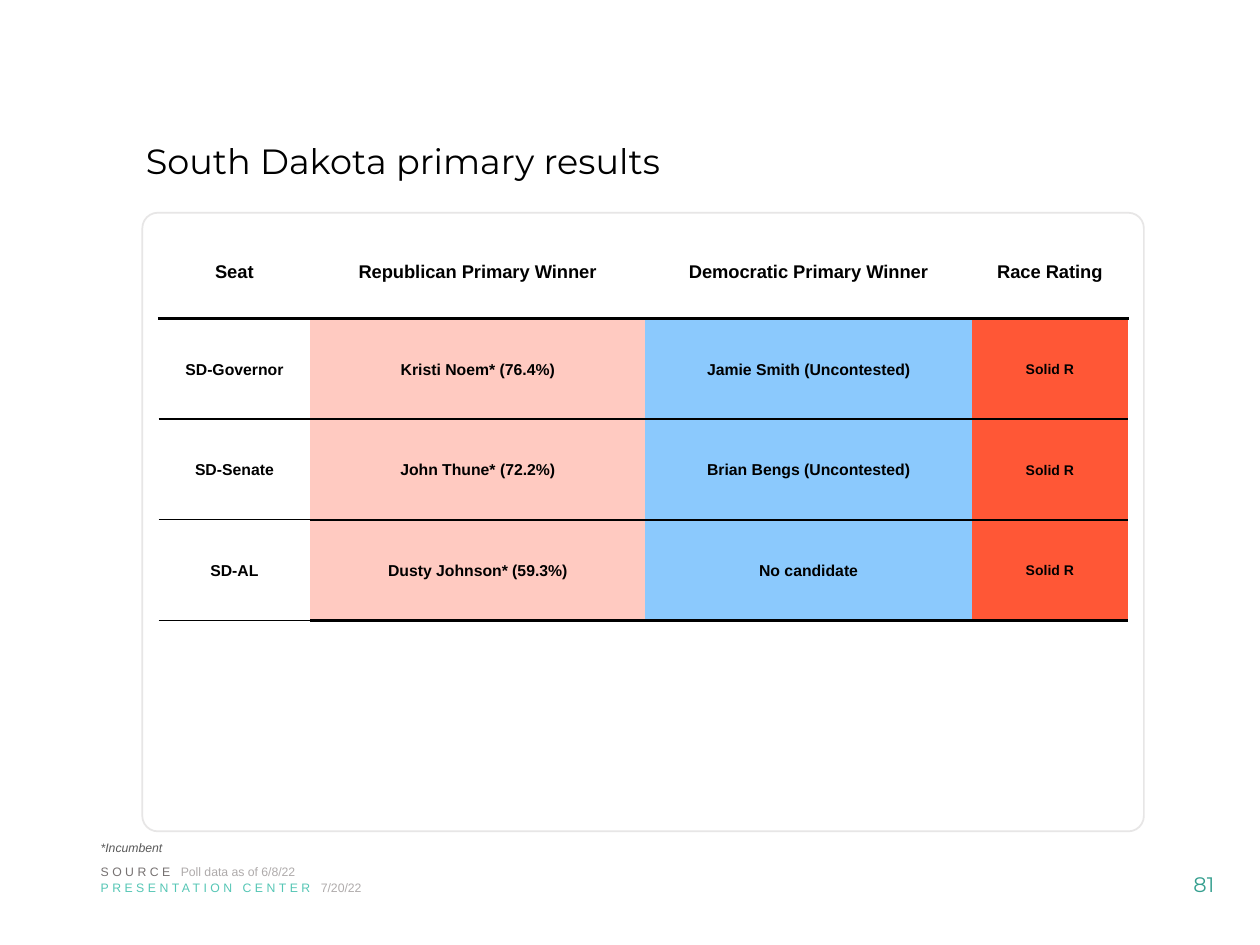
import lxml.etree
import pptx
import pptx.dml.color
import pptx.enum.shapes
import pptx.enum.text
import pptx.oxml.ns
import pptx.util

Cm = pptx.util.Cm
Pt = pptx.util.Pt
qn = pptx.oxml.ns.qn
Align = pptx.enum.text.PP_ALIGN
Anchor = pptx.enum.text.MSO_ANCHOR

HUES = {
    "black": "000000", "white": "FFFFFF", "frame": "E7E6E6",
    "teal": "55C6B5", "page": "359F8F", "pale": "AFABAB",
    "gray": "767171", "note": "595959",
    "rose": "FFCAC1", "blue": "8BC9FD", "red": "FF5736",
}
PLAIN = "{2D5ABB26-0587-4C30-8999-92F81FD0307C}"


def hue(name):
    return pptx.dml.color.RGBColor.from_string(HUES[name])


class Deck:
    def __init__(self, wide, high):
        self.show = pptx.Presentation()
        self.show.slide_width, self.show.slide_height = Cm(wide), Cm(high)
        self.slide = self.show.slides.add_slide(self.show.slide_layouts[6])
        self.face = "Arial"

    def run(self, para, text, size, color, gap=0, **form):
        part = para.add_run()
        part.text = text
        looks = {"name": self.face, "size": Pt(size), **form}
        for key, value in looks.items():
            setattr(part.font, key, value)
        part.font.color.rgb = hue(color)
        if gap:
            part.font._element.set("spc", str(gap * 100))

    def text(self, box, runs, anchor=Anchor.TOP, **form):
        frame = self.slide.shapes.add_textbox(*map(Cm, box)).text_frame
        frame.word_wrap = True
        frame.vertical_anchor = anchor
        para = frame.paragraphs[0]
        for key, value in form.items():
            setattr(para, key, value)
        for text, size, color, looks in runs:
            self.run(para, text, size, color, **looks)

    def card(self, box, bend):
        kind = pptx.enum.shapes.MSO_SHAPE.ROUNDED_RECTANGLE
        card = self.slide.shapes.add_shape(kind, *map(Cm, box))
        card.adjustments[0] = bend
        card.shadow.inherit = False
        card.fill.solid()
        card.fill.fore_color.rgb = hue("white")
        card.line.color.rgb = hue("frame")
        card.line.width = Pt(1)

    def edge(self, cell, sides):
        props = cell._tc.get_or_add_tcPr()
        for spot, side in enumerate("LRTB"):
            line = lxml.etree.Element(qn("a:ln" + side))
            props.insert(spot, line)
            if side not in sides:
                lxml.etree.SubElement(line, qn("a:noFill"))
                continue
            color, width = sides[side]
            line.set("w", str(int(Pt(width))))
            fill = lxml.etree.SubElement(line, qn("a:solidFill"))
            lxml.etree.SubElement(fill, qn("a:srgbClr")).set("val", HUES[color])

    def cell(self, cell, text, size, fill, sides):
        looks = {
            "vertical_anchor": Anchor.MIDDLE, "margin_left": Cm(0.03),
            "margin_right": Cm(0.03), "margin_top": Cm(0.03), "margin_bottom": 0,
        }
        for key, value in looks.items():
            setattr(cell, key, value)
        para = cell.text_frame.paragraphs[0]
        para.alignment = Align.CENTER
        self.run(para, text, size, "black", bold=True)
        if fill:
            cell.fill.solid()
            cell.fill.fore_color.rgb = hue(fill)
        else:
            cell.fill.background()
        self.edge(cell, sides)

    def table(self, left, top, wides, highs, rows):
        box = map(Cm, (left, top, sum(wides), sum(highs)))
        grid = self.slide.shapes.add_table(len(rows), len(wides), *box).table
        grid.first_row = grid.horz_banding = False
        grid._tbl.tblPr.find(qn("a:tableStyleId")).text = PLAIN
        for col, wide in zip(grid.columns, wides):
            col.width = Cm(wide)
        for row, high in zip(grid.rows, highs):
            row.height = Cm(high)
        sizes, fills = (9, 9, 9, 8), (None, "rose", "blue", "red")
        last = len(rows) - 1
        for r, row in enumerate(rows):
            for c, text in enumerate(row):
                if r == 0:
                    sides = dict.fromkeys("LRT", ("white", 1))
                    sides["B"] = ("black", 1.5)
                    self.cell(grid.cell(r, c), text, 10.5, None, sides)
                    continue
                base = 1.5 if r == last else 1
                if c == 0 and r > 1:
                    base = 0.75
                above = 1.5 if r == 1 else 0.75 if c == 0 and r == last else 1
                sides = {"T": ("black", above), "B": ("black", base)}
                self.cell(grid.cell(r, c), text, sizes[c], fills[c], sides)


def main():
    deck = Deck(25.4, 19.05)
    mont = {"name": "Montserrat"}
    deck.text((23.14, 17.32, 2.26, 1.02), [("81", 12, "page", mont)],
              Anchor.MIDDLE, alignment=Align.CENTER)
    deck.text((2.69, 2.29, 20.4, 2.01),
              [("South Dakota primary results", 20, "black", mont)],
              Anchor.MIDDLE, line_spacing=0.9)
    deck.card((2.87, 4.29, 20.19, 12.47), 0.025)
    for top, wide, label, color, value in (
        (17.63, 7.47, "PRESENTATION CENTER ", "teal", "7/20/22"),
        (17.3, 10.13, "SOURCE ", "gray", "Poll data as of 6/8/22"),
    ):
        deck.text((1.78, top, wide, 0.56),
                  [(label, 7, color, {"gap": 2}), (value, 7, "pale", {})])
    deck.table(3.2, 4.52, (3.05, 6.76, 6.58, 3.15), (1.9, 2.03, 2.03, 2.03), (
        ("Seat", "Republican Primary Winner", "Democratic Primary Winner", "Race Rating"),
        ("SD-Governor", "Kristi Noem* (76.4%)", "Jamie Smith (Uncontested)", "Solid R"),
        ("SD-Senate", "John Thune* (72.2%)", "Brian Bengs (Uncontested)", "Solid R"),
        ("SD-AL", "Dusty Johnson* (59.3%)", "No candidate", "Solid R"),
    ))
    deck.text((1.78, 16.81, 22.91, 0.56),
              [("*Incumbent", 7, "note", {"italic": True})])
    deck.show.save("out.pptx")


if __name__ == "__main__":
    main()
